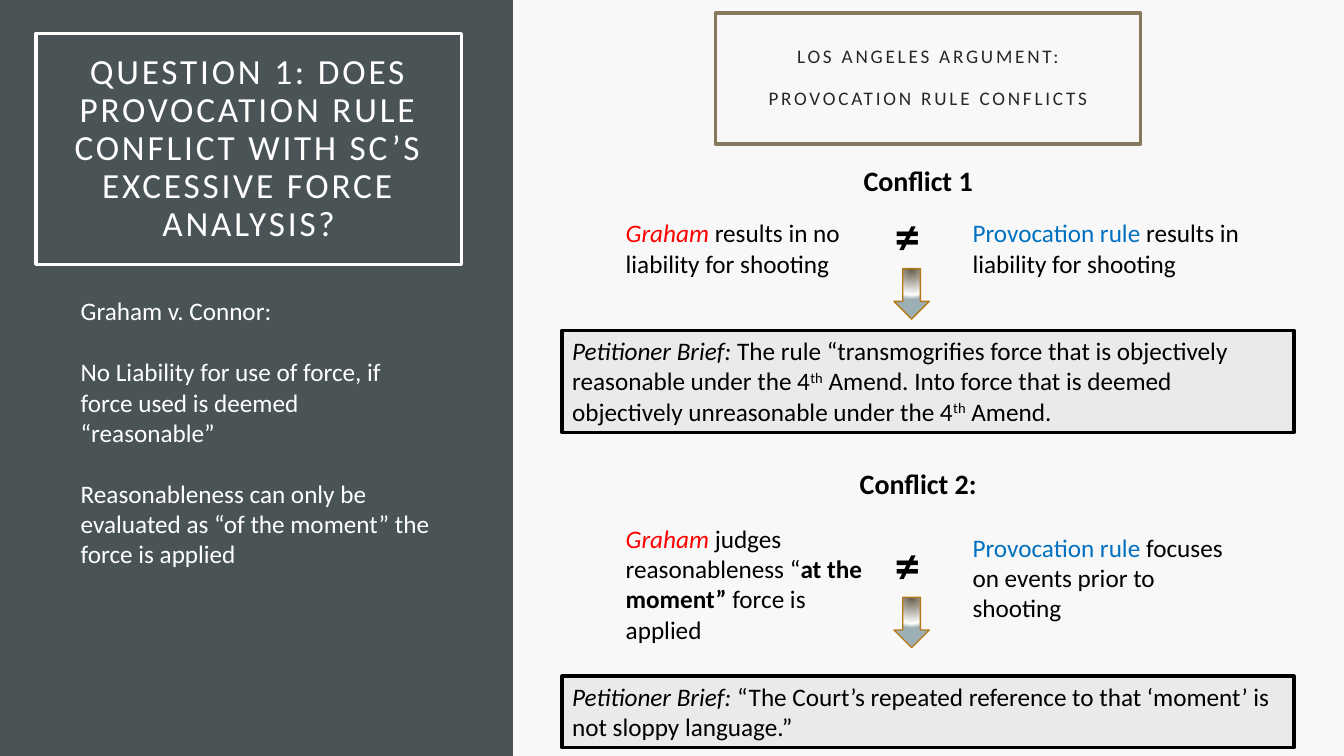
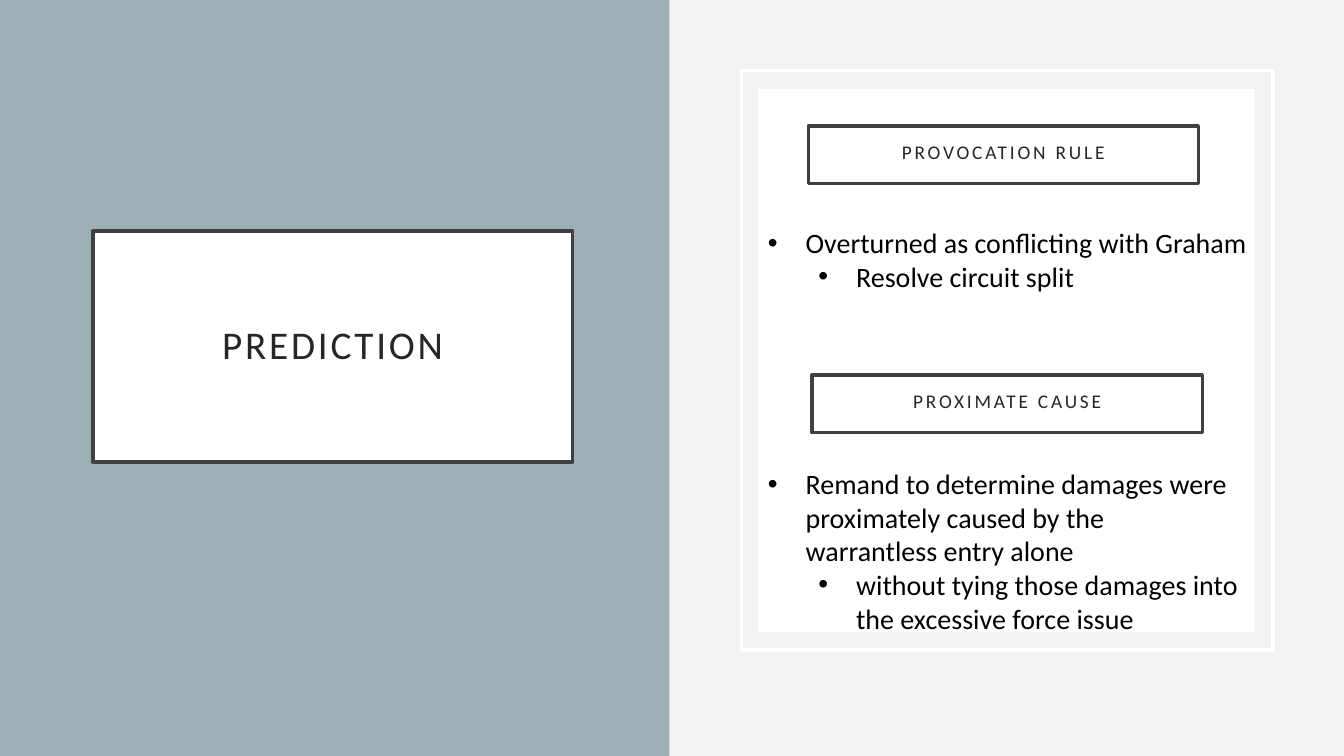
from pptx import Presentation
from pptx.dml.color import RGBColor
from pptx.enum.shapes import MSO_SHAPE
from pptx.enum.text import MSO_ANCHOR, MSO_AUTO_SIZE, PP_ALIGN
from pptx.oxml import parse_xml
from pptx.oxml.ns import nsdecls, qn
from pptx.util import Cm, Pt

COLORS = {
    "slate": "4A5356", "mist": "9BAFB5", "paper": "F8F8F8", "fog": "F2F2F2",
    "white": "FFFFFF", "black": "000000", "ink": "262626", "frame": "404040",
    "olive": "87795D", "umber": "655B46", "amber": "B67815", "brief": "ECEAE8",
    "red": "FF0000", "blue": "0070C0",
}
FONT = "Calibri"
SLIDE_W, SLIDE_H = 33.87, 19.05
BORDER = 2.5
GRAHAM = ("Graham ", {"color": "red", "italic": True})
PROVOCATION = ("Provocation rule ", {"color": "blue"})
BRIEF = ("Petitioner Brief: ", {"italic": True})
TH = ("th", {"raised": True})


def rgb(name):
    return RGBColor.from_string(COLORS[name])


# Shared building blocks; every box is (left, top, width, height) in cm
def place(shape, box):
    """Move a placeholder to its box, in front of what is drawn so far."""
    shape.left, shape.top, shape.width, shape.height = map(Cm, box)
    shape._element.getparent().append(shape._element)
    return shape


def paint(shape, fill=None, line=None, width=BORDER):
    if fill:
        shape.fill.solid()
        shape.fill.fore_color.rgb = rgb(fill)
    else:
        shape.fill.background()
    if line:
        shape.line.color.rgb = rgb(line)
        shape.line.width = Pt(width)
    else:
        shape.line.fill.background()


def add_block(slide, box, fill=None, line=None, width=BORDER,
              kind=MSO_SHAPE.RECTANGLE):
    block = slide.shapes.add_shape(kind, *map(Cm, box))
    block.shadow.inherit = False
    paint(block, fill, line, width)
    return block


def set_font(font, size, color, bold=False, italic=False):
    font.name, font.size = FONT, Pt(size)
    font.bold, font.italic = bold, italic
    font.color.rgb = rgb(color)


def write(shape, paragraphs, size=18, color="black", bold=False,
          align=PP_ALIGN.LEFT, anchor=MSO_ANCHOR.TOP, leading=1.0, gap=0,
          tracking=0):
    """Fill a shape; a paragraph is a list of strings or (string, changes)."""
    frame = shape.text_frame
    frame.word_wrap = True
    frame.auto_size = MSO_AUTO_SIZE.NONE
    frame.vertical_anchor = anchor
    for index, pieces in enumerate(paragraphs):
        paragraph = frame.add_paragraph() if index else frame.paragraphs[0]
        paragraph.alignment = align
        paragraph.line_spacing = leading
        paragraph.space_before = Pt(gap if index else 0)
        set_font(paragraph.font, size, color, bold)
        for piece in pieces:
            text, changes = (piece, {}) if isinstance(piece, str) else piece
            run = paragraph.add_run()
            run.text = text
            set_font(run.font, size, changes.get("color", color),
                     changes.get("bold", bold), changes.get("italic", False))
            properties = run._r.get_or_add_rPr()
            if tracking:
                properties.set("spc", str(tracking * 100))
            if changes.get("raised"):
                properties.set("baseline", "30000")
    return frame


def add_text(slide, box, pieces, **style):
    return write(slide.shapes.add_textbox(*map(Cm, box)), [pieces], **style)


def write_banner(shape, lines, size, color="ink", leading=0.9, gap=0):
    """Centred, letter-spaced text of the framed titles and headings."""
    frame = write(shape, [[line] for line in lines], size, color,
                  align=PP_ALIGN.CENTER, anchor=MSO_ANCHOR.MIDDLE,
                  leading=leading, gap=gap, tracking=2)
    frame.margin_left = frame.margin_right = Cm(0.51)
    frame.margin_top = frame.margin_bottom = Cm(0.51)


def set_bullet(paragraph, char=None, left=0.0, hanging=0.0):
    properties = paragraph._p.get_or_add_pPr()
    properties.set("marL", str(Cm(left)))
    properties.set("indent", str(-Cm(hanging)))
    tag = f'buChar {nsdecls("a")} char="{char}"' if char else f'buNone {nsdecls("a")}'
    bullet = parse_xml(f"<a:{tag}/>")
    properties.find(qn("a:defRPr")).addprevious(bullet)


def start_slide(deck, layout, background, panel, panel_width):
    slide = deck.slides.add_slide(deck.slide_layouts[layout])
    slide.background.fill.solid()
    slide.background.fill.fore_color.rgb = rgb(background)
    add_block(slide, (0, 0, panel_width, SLIDE_H), panel)
    return slide


def add_title(slide, box, text, size, color, fill, line):
    title = place(slide.shapes.title, box)
    paint(title, fill, line)
    write_banner(title, [text], size, color)


# Slide 1: question and conflicts
def add_down_arrow(slide, left, top):
    arrow = add_block(slide, (left, top, 0.89, 1.27), line="amber", width=1,
                      kind=MSO_SHAPE.DOWN_ARROW)
    stops = "".join(
        f'<a:gs pos="{position * 1000}"><a:srgbClr val="{COLORS[name]}"/></a:gs>'
        for position, name in ((0, "umber"), (85, "white"), (100, "mist")))
    gradient = parse_xml(
        f'<a:gradFill {nsdecls("a")}><a:gsLst>{stops}</a:gsLst>'
        '<a:path path="circle"><a:fillToRect l="50000" t="-80000" '
        'r="50000" b="180000"/></a:path></a:gradFill>')
    properties = arrow._element.spPr
    properties.replace(properties.find(qn("a:noFill")), gradient)


def add_conflict(slide, box, heading, graham, provocation, brief):
    """Each side is (offset from the top, width, text); brief ends the box."""
    left, top, width, height = box
    graham_top, graham_width, graham_text = graham
    rule_top, rule_width, rule_text = provocation
    brief_height, brief_text = brief
    sign_top = top + rule_top + (0.03 if rule_top > graham_top else -0.33)

    add_text(slide, (left + 6.87, top, 4.2, 1.12), [heading], size=20,
             bold=True, align=PP_ALIGN.CENTER)
    add_text(slide, (left + 1.35, top + graham_top, graham_width, 2.57),
             [GRAHAM, *graham_text])
    add_text(slide, (left + 10.09, top + rule_top, rule_width, 2.57),
             [PROVOCATION, rule_text])
    add_text(slide, (left + 8.13, sign_top, 2.21, 1.8), ["≠"], size=36, bold=True)
    add_down_arrow(slide, left + 8.36, sign_top + 1.74)
    quote = add_block(
        slide, (left, top + height - brief_height, width, brief_height),
        "brief", "black")
    write(quote, [[BRIEF, *brief_text]])


def build_question(deck):
    slide = start_slide(deck, 1, "paper", "slate", 12.93)
    add_title(slide, (0.91, 0.84, 10.72, 5.82),
              "QUESTION 1: DOES PROVOCATION RULE CONFLICT WITH SC’S "
              "EXCESSIVE FORCE ANALYSIS?", 25.2, "white", None, "white")

    # Holding of the case
    holding = place(slide.placeholders[1], (1.78, 7.32, 9.35, 9.5))
    frame = write(holding, [
        ["Graham v. Connor:"],
        ["No Liability for use of force, if force used is deemed “reasonable”"],
        ["Reasonableness can only be evaluated as “of the moment” the force "
         "is applied"],
    ], color="white", gap=22)
    for paragraph in frame.paragraphs:
        set_bullet(paragraph)

    # Argument
    argument = add_block(slide, (18.03, 0.33, 10.72, 3.3), line="olive")
    write_banner(argument, ["LOS ANGELES ARGUMENT:", "PROVOCATION RULE CONFLICTS"],
                 13.7, gap=15)
    add_conflict(
        slide, (14.17, 3.99, 18.44, 6.91), "Conflict 1",
        (1.37, 7.19, ["results in no liability for shooting"]),
        (1.37, 8.66, "results in liability for shooting"),
        (2.57, ["The rule “transmogrifies force that is objectively reasonable "
                "under the 4", TH, " Amend. Into force that is deemed "
                "objectively unreasonable under the 4", TH, " Amend."]))
    add_conflict(
        slide, (14.17, 11.63, 18.44, 7.21), "Conflict 2:",
        (1.43, 6.6, ["judges reasonableness “",
                     ("at the moment” ", {"bold": True}), "force is applied"]),
        (1.65, 7.04, "focuses on events prior to shooting"),
        (1.8, ["“The Court’s repeated reference to that ‘moment’ is not "
               "sloppy language.”"]))


# Slide 2: prediction
def add_outcome(slide, heading_box, heading, body, body_box, points):
    """A framed heading and its list: one main point and one sub-point."""
    label = add_block(slide, heading_box, "white", "frame")
    write_banner(label, [heading], 13.8, leading=0.7)
    frame = write(place(body, body_box), [[point] for point in points], size=20)
    for level, paragraph in enumerate(frame.paragraphs):
        paragraph.level = level
        set_bullet(paragraph, "•", 0.95 + 1.27 * level, 0.95)


def build_prediction(deck):
    slide = start_slide(deck, 3, "fog", "mist", 16.87)
    add_title(slide, (2.34, 5.82, 12.09, 5.82), "PREDICTION", 28, "ink",
              "white", "frame")

    # Card with a white frame
    left, top = 19.1, 2.24
    add_block(slide, (18.69, 1.78, 13.39, 14.6), line="white")
    add_block(slide, (left, top, 12.52, 13.69), "white")

    add_outcome(slide, (left + 1.27, top + 0.94, 9.83, 1.45), "PROVOCATION RULE",
                slide.placeholders[1], (left, top + 3.32, 14.05, 3),
                ["Overturned as conflicting with Graham",
                 "Resolve circuit split"])
    add_outcome(slide, (left + 1.37, top + 7.21, 9.83, 1.45), "PROXIMATE CAUSE",
                slide.placeholders[2], (left, top + 9.39, 12.4, 4.52),
                ["Remand to determine damages were proximately caused by the "
                 "warrantless entry alone",
                 "without tying those damages into the excessive force issue"])


def main():
    deck = Presentation()
    deck.slide_width, deck.slide_height = Cm(SLIDE_W), Cm(SLIDE_H)
    build_question(deck)
    build_prediction(deck)
    deck.save("out.pptx")


if __name__ == "__main__":
    main()
